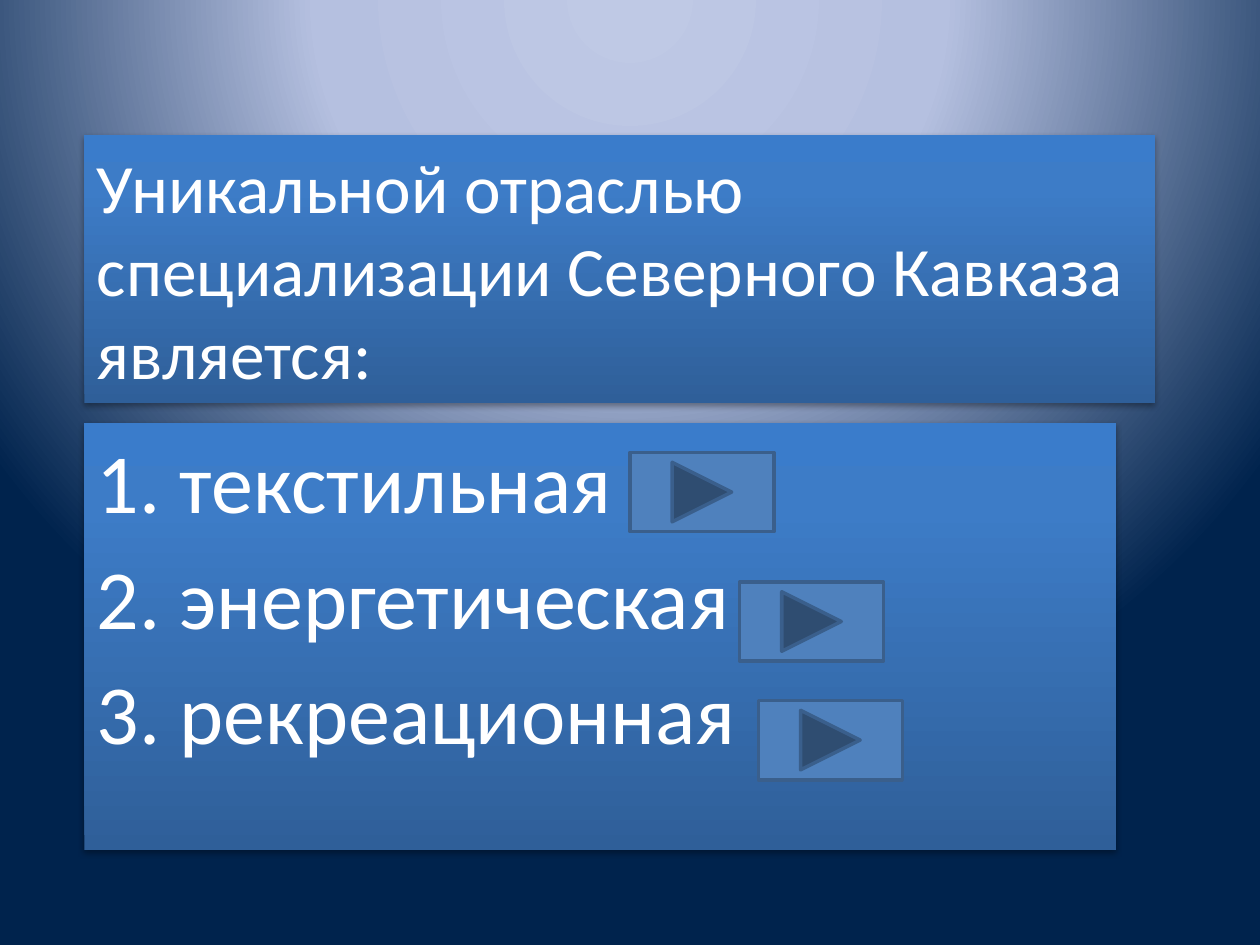
import dataclasses

import pptx
import pptx.dml.color
import pptx.enum.shapes
import pptx.enum.text
import pptx.oxml
import pptx.oxml.ns
import pptx.util

Cm = pptx.util.Cm
Pt = pptx.util.Pt
RGB = pptx.dml.color.RGBColor.from_string


@dataclasses.dataclass(frozen=True)
class Theme:
    font: str = "Calibri"
    text: str = "FFFFFF"
    title_size: float = 39.6
    answer_size: float = 48
    answer_gap: float = 8.5
    button_fill: str = "4F81BD"
    button_line: str = "3A5F8C"
    # Gradient stops: (percent, colour)
    panel: tuple = ((0, "2F5F99"), (80, "3D7CC7"), (100, "3A7CCB"))
    backdrop: tuple = ((0, "BFC9E5"), (40, "B5C0E0"), (100, "00234D"))


LINEAR_UP = '<a:lin ang="16200000" scaled="0"/>'
GLOW_FROM_TOP = (
    '<a:path path="circle">'
    '<a:fillToRect l="50000" t="-80000" r="50000" b="180000"/></a:path>'
)
SOFT_SHADOW = (
    '<a:outerShdw %s blurRad="40000" dist="23000" dir="5400000" rotWithShape="0">'
    '<a:srgbClr val="000000"><a:alpha val="35000"/></a:srgbClr></a:outerShdw>'
    % pptx.oxml.ns.nsdecls("a")
)


class QuizSlide:
    """Holds the theme and the current slide."""

    def __init__(self, deck, theme):
        self.theme = theme
        self.slide = deck.slides.add_slide(deck.slide_layouts[0])

    def gradient(self, fill, properties, stops, direction):
        """Put a gradient where the solid fill of the properties stands."""
        fill.solid()
        solid = properties.find(pptx.oxml.ns.qn("a:solidFill"))
        stop_xml = "".join(
            f'<a:gs pos="{percent * 1000}"><a:srgbClr val="{colour}"/></a:gs>'
            for percent, colour in stops
        )
        properties.replace(solid, pptx.oxml.parse_xml(
            f'<a:gradFill {pptx.oxml.ns.nsdecls("a")} rotWithShape="1">'
            f"<a:gsLst>{stop_xml}</a:gsLst>{direction}</a:gradFill>"
        ))

    def backdrop(self):
        fill = self.slide.background.fill
        fill.solid()
        properties = self.slide.element.find(".//" + pptx.oxml.ns.qn("p:bgPr"))
        self.gradient(fill, properties, self.theme.backdrop, GLOW_FROM_TOP)

    def place(self, shape, left, top, width, height):
        shape.left, shape.top = Cm(left), Cm(top)
        shape.width, shape.height = Cm(width), Cm(height)

    def panel(self, placeholder, lines, size, anchor, bounds, gap=0):
        """Fill a placeholder with text on a shaded, shadowed panel."""
        self.place(placeholder, *bounds)
        properties = placeholder.element.spPr
        self.gradient(placeholder.fill, properties, self.theme.panel, LINEAR_UP)
        placeholder.shadow.inherit = False
        effects = properties.find(pptx.oxml.ns.qn("a:effectLst"))
        effects.append(pptx.oxml.parse_xml(SOFT_SHADOW))

        frame = placeholder.text_frame
        frame.text = "\n".join(lines)
        frame.word_wrap = True
        frame.auto_size = pptx.enum.text.MSO_AUTO_SIZE.NONE
        frame.vertical_anchor = anchor
        for index, para in enumerate(frame.paragraphs):
            para.alignment = pptx.enum.text.PP_ALIGN.LEFT
            para.space_before = Pt(gap if index else 0)
            para.font.name = self.theme.font
            para.font.size = Pt(size)
            para.font.color.rgb = RGB(self.theme.text)

    def title(self, text, bounds):
        self.panel(self.slide.shapes.title, [text], self.theme.title_size,
                   pptx.enum.text.MSO_ANCHOR.MIDDLE, bounds)

    def answers(self, lines, bounds):
        self.panel(self.slide.placeholders[1], lines, self.theme.answer_size,
                   pptx.enum.text.MSO_ANCHOR.TOP, bounds, self.theme.answer_gap)

    def forward_button(self, left, top):
        button = self.slide.shapes.add_shape(
            pptx.enum.shapes.MSO_SHAPE.ACTION_BUTTON_FORWARD_OR_NEXT,
            Cm(left), Cm(top), Cm(2.9), Cm(1.6))
        button.shadow.inherit = False
        button.fill.solid()
        button.fill.fore_color.rgb = RGB(self.theme.button_fill)
        button.line.color.rgb = RGB(self.theme.button_line)
        button.line.width = Pt(2)


def main():
    deck = pptx.Presentation()
    deck.slide_width, deck.slide_height = Cm(25.4), Cm(19.05)
    quiz = QuizSlide(deck, Theme())
    quiz.backdrop()

    # Question and answers
    quiz.title("Уникальной отраслью специализации Северного Кавказа является:",
               (1.7, 2.72, 21.59, 5.41))
    quiz.answers(["1. текстильная", "2. энергетическая", "3. рекреационная"],
                 (1.7, 8.53, 20.8, 8.61))

    # One button after each answer, last answer first
    for left, top in ((15.29, 14.12), (14.91, 11.73), (12.7, 9.12)):
        quiz.forward_button(left, top)

    deck.save("out.pptx")


if __name__ == "__main__":
    main()
